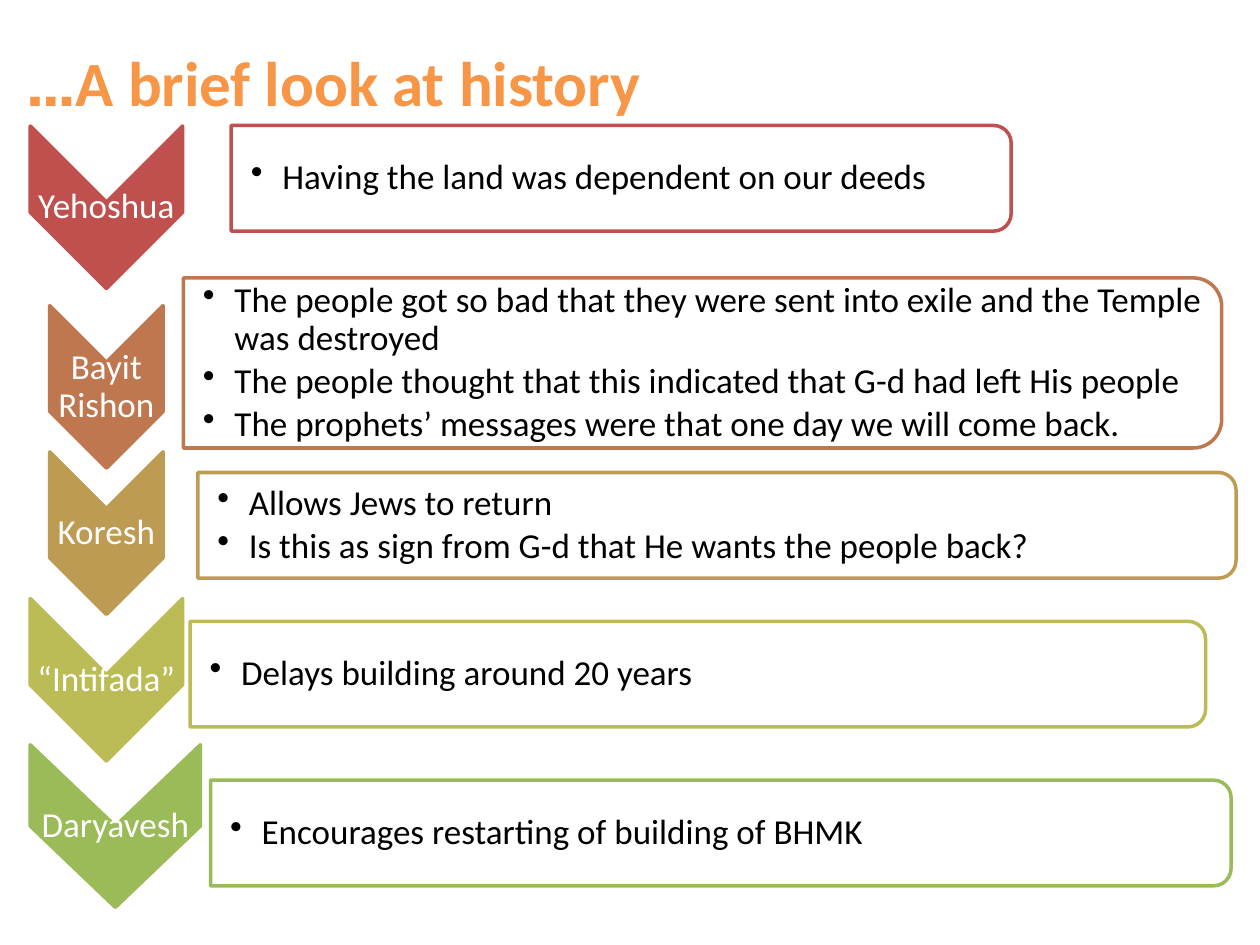
from lxml import etree
from pptx import Presentation
from pptx.dml.color import RGBColor
from pptx.enum import shapes, text
from pptx.oxml.ns import qn
from pptx.util import Pt

ORANGE = RGBColor(0xF7, 0x96, 0x46)
WHITE = RGBColor(0xFF, 0xFF, 0xFF)
BLACK = RGBColor(0x00, 0x00, 0x00)
RED = RGBColor(0xC0, 0x50, 0x4D)
RUST = RGBColor(0xBF, 0x77, 0x50)
OCHRE = RGBColor(0xBD, 0x9B, 0x53)
OLIVE = RGBColor(0xBC, 0xBC, 0x56)
GREEN = RGBColor(0x9B, 0xBB, 0x59)

FONT = "Calibri"
CHEVRON_LEFT = 17.3
CHEVRON_HEIGHT = 92.9
WIDE = 87
NARROW = 64.8

STAGES = [
    ("Yehoshua", RED, (CHEVRON_LEFT, 72, WIDE), (132.1, 71.7, 445.7, 60.4),
     ["Having the land was dependent on our deeds"]),
    ("Bayit Rishon", RUST, (28.4, 174.6, NARROW), (104.8, 158.8, 593.3, 97.2),
     ["The people got so bad that they were sent into exile and the Temple was destroyed",
      "The people thought that this indicated that G-d had left His people",
      "The prophets’ messages were that one day we will come back."]),
    ("Koresh", OCHRE, (28.4, 258.2, NARROW), (113, 270, 593.3, 60.4),
     ["Allows Jews to return",
      "Is this as sign from G-d that He wants the people back?"]),
    ("“Intifada”", OLIVE, (CHEVRON_LEFT, 342, WIDE), (108.6, 355, 580.3, 60.4),
     ["Delays building around 20 years"]),
    ("Daryavesh", GREEN, (CHEVRON_LEFT, 425.6, 97.2), (120.3, 445.8, 583.2, 60.4),
     ["Encourages restarting of building of BHMK"]),
]


def write(p, content, size=20, color=BLACK, bold=False, align=text.PP_ALIGN.LEFT,
          spacing=None, after=None, bullet=False):
    p.alignment = align
    if spacing:
        p.line_spacing = spacing
    if after is not None:
        p.space_after = Pt(after)
    if bullet:
        p.level = 1
        pPr = p._p.get_or_add_pPr()
        pPr.set("marL", str(Pt(18)))
        pPr.set("indent", str(-Pt(18)))
        etree.SubElement(pPr, qn("a:buChar")).set("char", "•")
    r = p.add_run()
    r.text = content
    r.font.name = FONT
    r.font.size = Pt(size)
    r.font.bold = bold
    r.font.color.rgb = color


def add_title(s, content):
    sp = s.shapes.title
    sp.left, sp.top, sp.width, sp.height = Pt(9), Pt(1.5), Pt(648), Pt(90)
    tf = sp.text_frame
    tf.vertical_anchor = text.MSO_ANCHOR.MIDDLE
    p = tf.paragraphs[0]
    write(p, content, size=36, color=ORANGE, bold=True)
    p._p.get_or_add_pPr().set("rtl", "1")


def add_turned_shape(s, kind, left, top, width, height, fill, line):
    sp = s.shapes.add_shape(kind, Pt(left + (width - height) / 2),
                            Pt(top + (height - width) / 2), Pt(height), Pt(width))
    sp.rotation = 90
    sp.shadow.inherit = False
    sp.fill.solid()
    sp.fill.fore_color.rgb = fill
    sp.line.color.rgb = line
    sp.line.width = Pt(2)
    return sp


def add_text(s, left, top, width, height, lines, inset=0.7, **style):
    box = s.shapes.add_textbox(Pt(left), Pt(top), Pt(width), Pt(height))
    tf = box.text_frame
    tf.word_wrap = True
    tf.vertical_anchor = text.MSO_ANCHOR.MIDDLE
    tf.margin_left = Pt(inset)
    tf.margin_top = tf.margin_right = tf.margin_bottom = Pt(0.7)
    for i, line in enumerate(lines):
        p = tf.add_paragraph() if i else tf.paragraphs[0]
        write(p, line, spacing=0.9, **style)


def add_chevron(s, label, color, left, top, width):
    add_turned_shape(s, shapes.MSO_SHAPE.CHEVRON, left, top, width,
                     CHEVRON_HEIGHT, color, color)
    height = CHEVRON_HEIGHT - width if width < CHEVRON_HEIGHT else CHEVRON_HEIGHT
    add_text(s, left, top + (CHEVRON_HEIGHT - height) / 2, width, height, [label],
             color=WHITE, align=text.PP_ALIGN.CENTER, after=7)


def add_panel(s, lines, color, left, top, width, height):
    sp = add_turned_shape(s, shapes.MSO_SHAPE.ROUND_2_SAME_RECTANGLE,
                          left, top, width, height, WHITE, color)
    fill = sp._element.spPr.find(qn("a:solidFill"))
    etree.SubElement(fill[0], qn("a:alpha")).set("val", "90000")
    corner = 0.05 * height
    add_text(s, left, top + corner, width - corner, height - 2 * corner, lines,
             inset=11.2, after=3, bullet=True)


def main():
    prs = Presentation()
    prs.slide_width, prs.slide_height = Pt(720), Pt(540)
    s = prs.slides.add_slide(prs.slide_layouts[5])
    add_title(s, "A brief look at history…")
    for label, color, chevron, panel, lines in STAGES:
        add_chevron(s, label, color, *chevron)
        add_panel(s, lines, color, *panel)
    prs.save("out.pptx")


if __name__ == "__main__":
    main()
